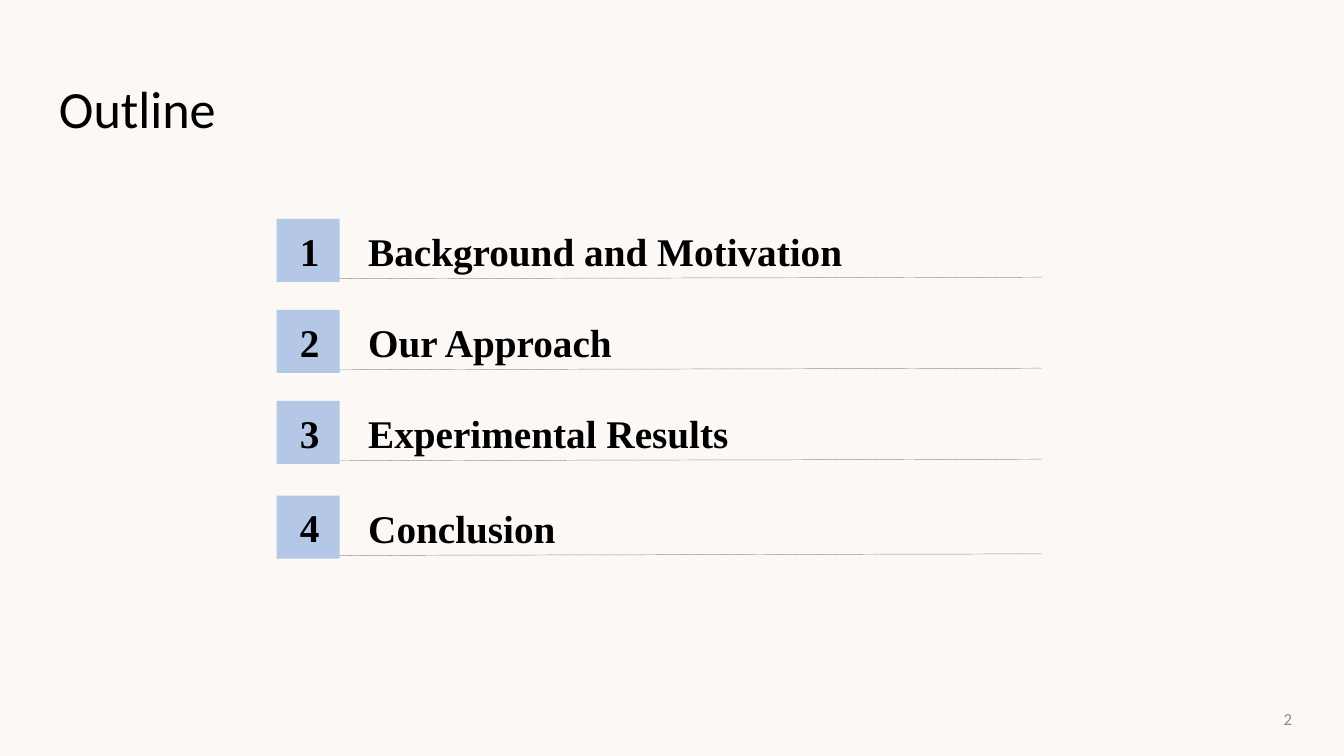
from pptx import Presentation
from pptx.dml.color import RGBColor
from pptx.enum.dml import MSO_LINE
from pptx.enum.shapes import MSO_CONNECTOR, MSO_SHAPE
from pptx.enum.text import MSO_ANCHOR, MSO_AUTO_SIZE, PP_ALIGN
from pptx.oxml.ns import qn
from pptx.util import Cm, Pt
from lxml import etree

CREAM = RGBColor(0xFC, 0xF8, 0xF5)
BLUE = RGBColor(0xB4, 0xC7, 0xE7)
BLACK = RGBColor(0, 0, 0)
LINE_GRAY = RGBColor(0x80, 0x80, 0x80)
NUMBER_GRAY = RGBColor(0x8C, 0x8C, 0x8C)
SERIF, SANS = "Times New Roman", "Calibri"

TOPICS = [
    ("Background and Motivation", 4.14),
    ("Our Approach", 5.86),
    ("Experimental Results", 7.58),
    ("Conclusion", 9.37),
]


def write(shape, text, font, size, color, bold=False,
          align=PP_ALIGN.LEFT, anchor=MSO_ANCHOR.MIDDLE):
    tf = shape.text_frame
    tf.word_wrap = True
    tf.auto_size = MSO_AUTO_SIZE.NONE
    tf.vertical_anchor = anchor
    p = tf.paragraphs[0]
    p.text = text
    p.alignment = align
    p.font.name, p.font.size, p.font.bold = font, Pt(size), bold
    p.font.color.rgb = color
    return tf


def add_title(s, text, x, y, w, h):
    title = s.shapes.title
    title.left, title.top, title.width, title.height = Cm(x), Cm(y), Cm(w), Cm(h)
    tf = write(title, text, SANS, 28, BLACK)
    tf.paragraphs[0].line_spacing = 0.9


def add_topic(s, number, text, x, y, w, h):
    """A numbered square of side h, a label and a dotted rule, w wide in all."""
    group = s.shapes.add_group_shape().shapes

    # Rule, rising slightly to the right
    rule = group.add_connector(MSO_CONNECTOR.STRAIGHT, Cm(x + 0.89), Cm(y + 1.13),
                               Cm(x + w), Cm(y + 1.1))
    rule.line.color.rgb = LINE_GRAY
    rule.line.width = Pt(0.25)
    rule.line.dash_style = MSO_LINE.SQUARE_DOT
    etree.SubElement(rule._element.spPr, qn("a:effectLst"))

    # Numbered square
    square = group.add_shape(MSO_SHAPE.RECTANGLE, Cm(x), Cm(y), Cm(h), Cm(h))
    square.shadow.inherit = False
    square.fill.solid()
    square.fill.fore_color.rgb = BLUE
    square.line.fill.background()
    tf = write(square, str(number), SERIF, 21, BLACK, bold=True)
    tf.margin_left, tf.margin_right = Cm(0.44), Cm(0)

    # Label
    label = group.add_textbox(Cm(x + 1.48), Cm(y + 0.04), Cm(w - 1.35), Cm(1.14))
    write(label, text, SERIF, 21, BLACK, bold=True, anchor=MSO_ANCHOR.TOP)


def add_page_number(s, number, x, y, w, h):
    box = s.shapes.add_textbox(Cm(x), Cm(y), Cm(w), Cm(h))
    write(box, str(number), SANS, 9, NUMBER_GRAY, align=PP_ALIGN.RIGHT)


def main():
    prs = Presentation()
    prs.slide_width, prs.slide_height = Cm(25.4), Cm(14.29)
    s = prs.slides.add_slide(prs.slide_layouts[5])
    s.background.fill.solid()
    s.background.fill.fore_color.rgb = CREAM

    add_title(s, "Outline", 0.86, 1.6, 21.9, 1)
    for number, (text, top) in enumerate(TOPICS, 1):
        add_topic(s, number, text, 5.23, top, 14.46, 1.19)
    add_page_number(s, 2, 18.95, 13.21, 5.72, 0.76)
    prs.save("out.pptx")


if __name__ == "__main__":
    main()
